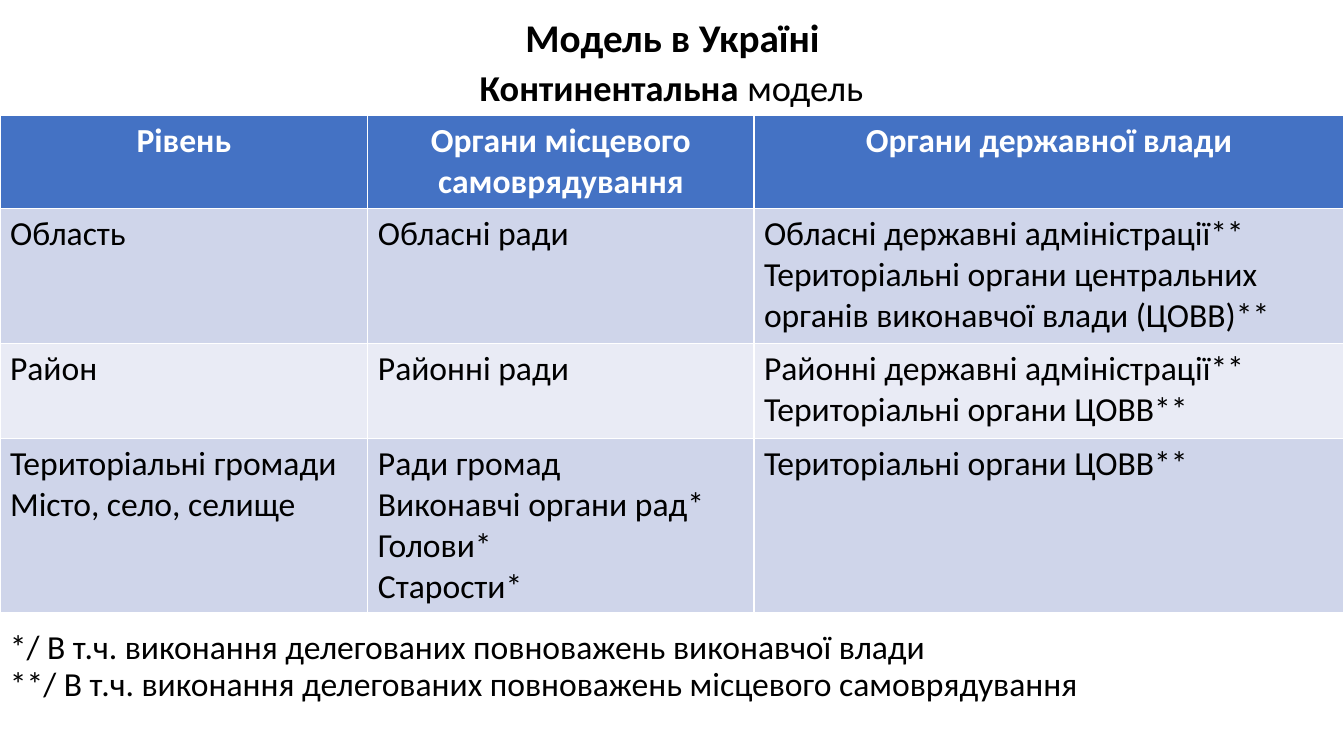
from lxml import etree
from pptx import Presentation
from pptx.dml.color import RGBColor
from pptx.enum.text import MSO_ANCHOR, MSO_AUTO_SIZE, PP_ALIGN
from pptx.oxml.ns import qn
from pptx.util import Cm, Pt

LEFT, CENTER, JUSTIFY = PP_ALIGN.LEFT, PP_ALIGN.CENTER, PP_ALIGN.JUSTIFY
TOP, MIDDLE = MSO_ANCHOR.TOP, MSO_ANCHOR.MIDDLE
NO_AUTOFIT = MSO_AUTO_SIZE.NONE

FONT = "Calibri"
COLORS = {
    "text": "000000",
    "header_text": "FFFFFF",
    "header": "4472C4",
    "odd_row": "CFD5EA",
    "even_row": "E9EBF5",
}
COLUMN_WIDTHS = [9.27, 9.73, 14.87]
ROW_HEIGHTS = [2.34, 3.4, 2.39, 4.39]
LEVELS = [
    [["Рівень"], ["Органи місцевого самоврядування"], ["Органи державної влади"]],
    [
        ["Область"],
        ["Обласні ради"],
        [
            "Обласні державні адміністрації**",
            "Територіальні органи центральних органів виконавчої влади (ЦОВВ)**",
        ],
    ],
    [
        ["Район"],
        ["Районні ради"],
        ["Районні державні адміністрації**", "Територіальні органи ЦОВВ**"],
    ],
    [
        ["Територіальні громади Місто, село, селище"],
        ["Ради громад", "Виконавчі органи рад*", "Голови*", "Старости*"],
        ["Територіальні органи ЦОВВ**"],
    ],
]
FOOTNOTES = [
    "*/ В т.ч. виконання делегованих повноважень виконавчої влади",
    "**/ В т.ч. виконання делегованих повноважень місцевого самоврядування",
]


def add_span(para, text, size=24, bold=False, color="text"):
    span = para.add_run()
    span.text = text
    span.font.name = FONT
    span.font.size = Pt(size)
    span.font.bold = bold
    span.font.color.rgb = RGBColor.from_string(COLORS[color])


def fill_lines(frame, lines, align=LEFT, spacing=None, **style):
    for index, line in enumerate(lines):
        para = frame.add_paragraph() if index else frame.paragraphs[0]
        para.alignment = align
        para.line_spacing = spacing
        add_span(para, line, **style)


def place(box, left, top, width, height, anchor=TOP):
    box.left, box.top = Cm(left), Cm(top)
    box.width, box.height = Cm(width), Cm(height)
    frame = box.text_frame
    frame.word_wrap = True
    frame.auto_size = NO_AUTOFIT
    frame.vertical_anchor = anchor
    return frame


def add_subtitle(box):
    para = place(box, 0.76, 1.73, 32.33, 1.19).paragraphs[0]
    para.alignment = CENTER
    para.line_spacing = 0.8
    para.space_before = Pt(10)
    add_span(para, "Континентальна", size=26, bold=True)
    add_span(para, " модель", size=26)
    properties = para._p.get_or_add_pPr()
    properties.set("marL", "0")
    properties.set("indent", "0")
    etree.SubElement(properties, qn("a:buNone"))


def add_levels_table(page):
    table = page.shapes.add_table(
        len(LEVELS), len(COLUMN_WIDTHS), Cm(0), Cm(2.92),
        Cm(sum(COLUMN_WIDTHS)), Cm(sum(ROW_HEIGHTS)),
    ).table
    for column, width in zip(table.columns, COLUMN_WIDTHS):
        column.width = Cm(width)
    for number, (row, height) in enumerate(zip(table.rows, ROW_HEIGHTS)):
        row.height = Cm(height)
        if number == 0:
            fill = "header"
            style = {"align": CENTER, "bold": True, "color": "header_text"}
        else:
            fill = "odd_row" if number % 2 else "even_row"
            style = {}
        for cell, lines in zip(row.cells, LEVELS[number]):
            cell.fill.solid()
            cell.fill.fore_color.rgb = RGBColor.from_string(COLORS[fill])
            fill_lines(cell.text_frame, lines, **style)


def add_footnotes(page):
    box = page.shapes.add_textbox(0, 0, 0, 0)
    frame = place(box, 0, 15.77, 32.11, 2.97)
    fill_lines(frame, FOOTNOTES, align=JUSTIFY, spacing=0.9)


def main():
    deck = Presentation()
    deck.slide_width, deck.slide_height = Cm(33.87), Cm(19.05)
    page = deck.slides.add_slide(deck.slide_layouts[1])
    title = place(page.shapes.title, 2.34, 0.3, 29.21, 1.42, anchor=MIDDLE)
    fill_lines(title, ["Модель в Україні"], align=CENTER, spacing=0.9, size=28, bold=True)
    add_subtitle(page.placeholders[1])
    add_levels_table(page)
    add_footnotes(page)
    deck.save("out.pptx")


if __name__ == "__main__":
    main()
